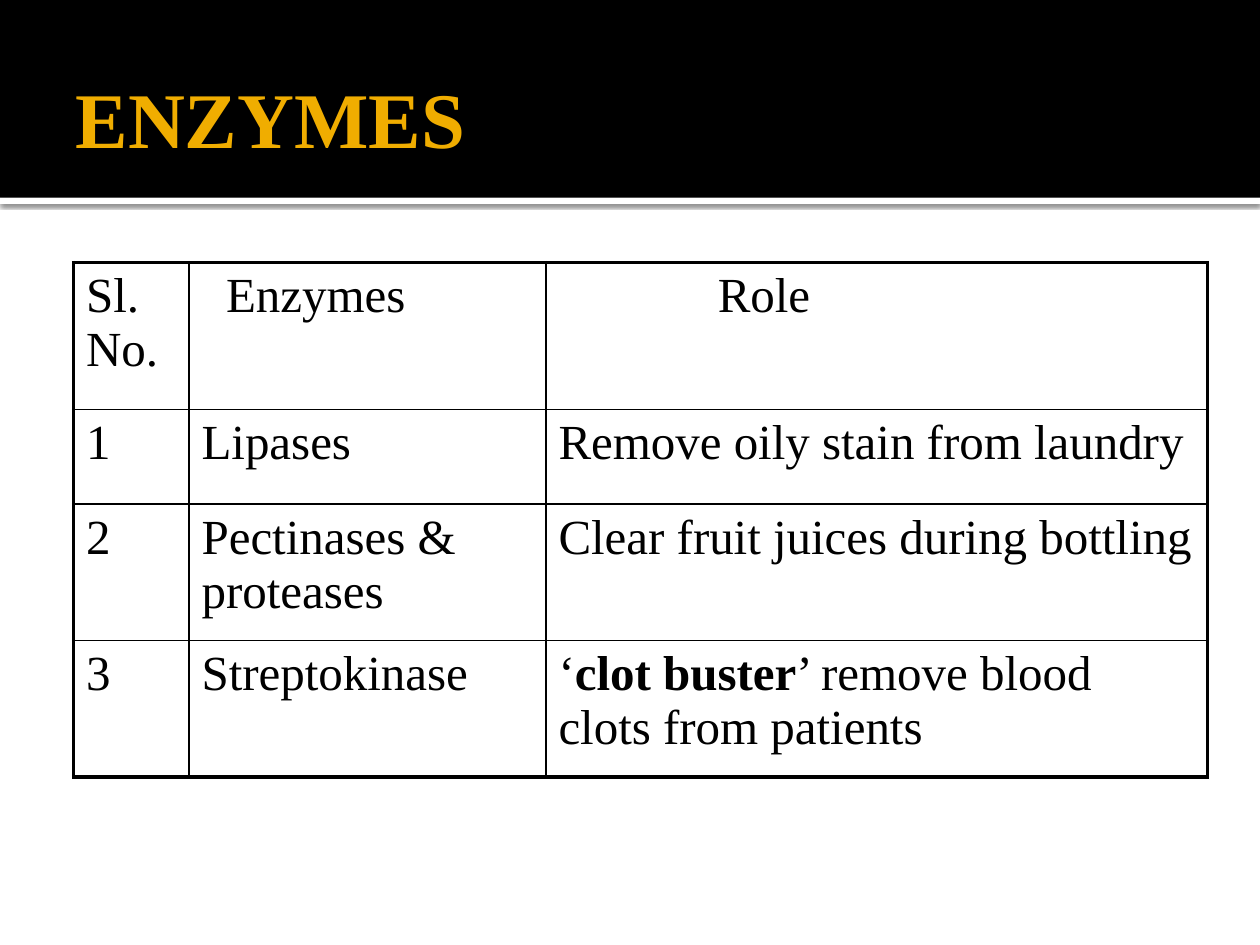
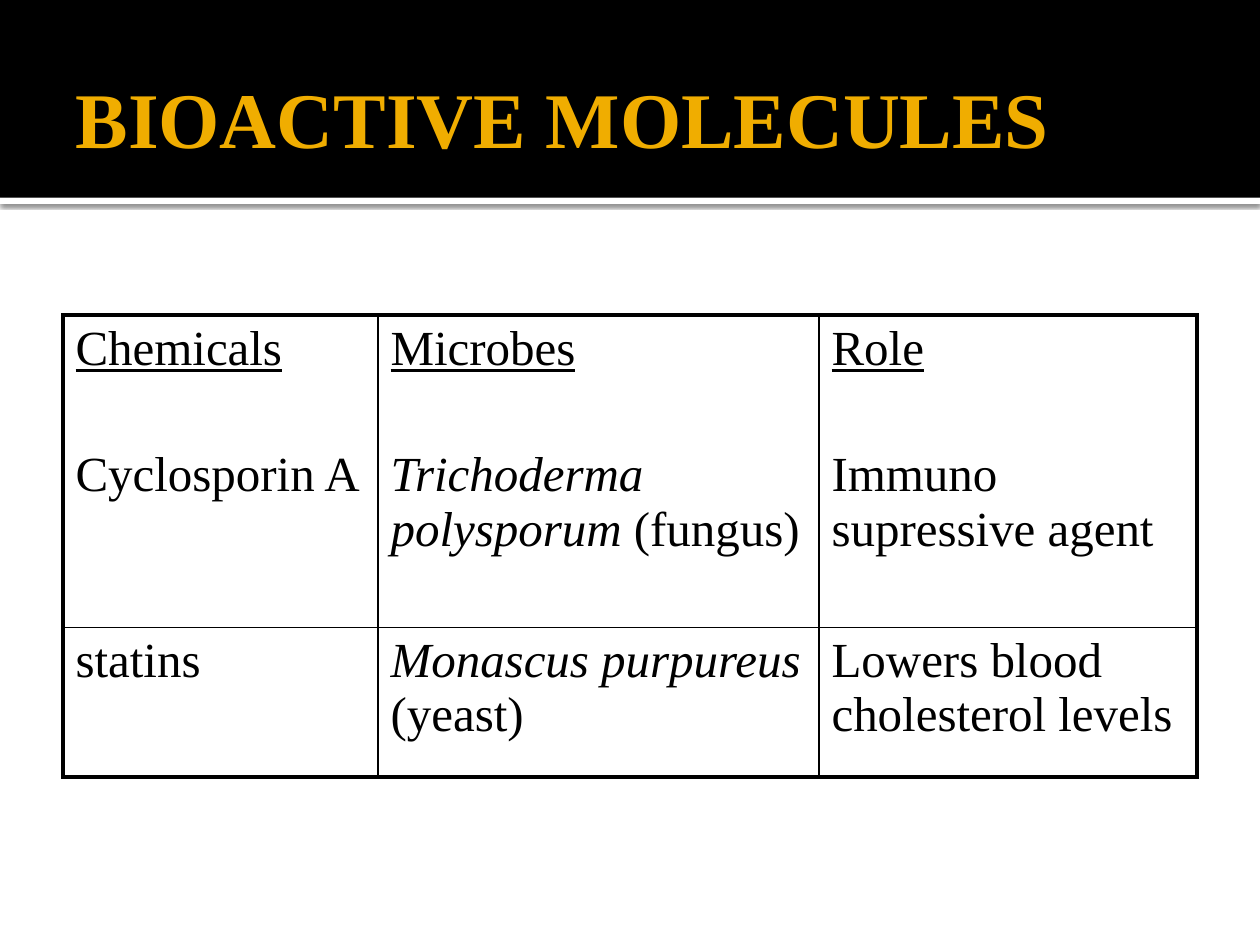
from dataclasses import dataclass

from lxml import etree
from pptx import Presentation
from pptx import util as u
from pptx.dml.color import RGBColor
from pptx.enum import shapes, text
from pptx.oxml import ns

Pt = u.Pt


@dataclass(frozen=True)
class Theme:
    font: str = "Times New Roman"
    black: str = "000000"
    white: str = "FFFFFF"
    gold: str = "F0AD00"
    title_size: float = 45
    body_size: float = 28
    outer_line: float = 2.25
    inner_line: float = 1
    section_gap: float = 41.5


THEME = Theme()
WIDTH, HEIGHT = 720, 540
BAND = (0, 0, WIDTH, 113)
STRIP = (0, 113, WIDTH, 3.6)
TITLE = (36, 21.6, 648, 90)

BOLD = {"bold": True}
ITALIC = {"italic": True}
UNDERLINE = {"underline": True}


def set_all(target, values):
    for name, value in values.items():
        setattr(target, name, value)


def place(sp, box):
    names = ("left", "top", "width", "height")
    set_all(sp, {name: Pt(v) for name, v in zip(names, box)})


def sub(parent, tag, **attrs):
    values = {name: str(value) for name, value in attrs.items()}
    return etree.SubElement(parent, ns.qn(tag), values)


def add_run(p, content, size, color, **style):
    r = p.add_run()
    r.text = content
    set_all(r.font, {"name": THEME.font, "size": Pt(size), "bold": False, **style})
    r.font.color.rgb = RGBColor.from_string(color)


def add_rect(s, box, color):
    sp = s.shapes.add_shape(shapes.MSO_SHAPE.RECTANGLE, *map(Pt, box))
    sp.shadow.inherit = False
    sp.fill.solid()
    sp.fill.fore_color.rgb = RGBColor.from_string(color)
    sp.line.fill.background()
    return sp


def add_header_to_layout(s):
    strip = add_rect(s, STRIP, THEME.white)
    effects = strip.element.spPr.find(ns.qn("a:effectLst"))
    shadow = sub(effects, "a:outerShdw", blurRad=Pt(2.5), dist=Pt(0.8),
                 dir=90 * 60000, algn="t", rotWithShape=0)
    sub(sub(shadow, "a:srgbClr", val=THEME.black), "a:alpha", val=60000)
    band = add_rect(s, BAND, THEME.black)
    tree = s.slide_layout.shapes.element
    for index, sp in enumerate((strip, band), start=2):
        tree.insert(index, sp.element)


def add_title(s, box, content):
    sp = s.shapes.title
    place(sp, box)
    tf = sp.text_frame
    set_all(tf, {
        "word_wrap": True,
        "auto_size": text.MSO_AUTO_SIZE.NONE,
        "vertical_anchor": text.MSO_ANCHOR.MIDDLE,
        "margin_left": Pt(7.2),
        "margin_right": Pt(3.6),
        "margin_top": Pt(3.6),
        "margin_bottom": Pt(3.6),
    })
    p = tf.paragraphs[0]
    p.alignment = text.PP_ALIGN.LEFT
    add_run(p, content, THEME.title_size, THEME.gold, **BOLD)


def set_borders(cell, outer_sides):
    tcPr = cell._tc.get_or_add_tcPr()
    for side in "LRTB":
        width = THEME.outer_line if side in outer_sides else THEME.inner_line
        ln = sub(tcPr, f"a:ln{side}", w=Pt(width))
        sub(sub(ln, "a:solidFill"), "a:srgbClr", val=THEME.black)


def fill_cell(cell, paragraphs):
    tf = cell.text_frame
    for index, runs in enumerate(paragraphs):
        p = tf.add_paragraph() if index else tf.paragraphs[0]
        p.alignment = text.PP_ALIGN.LEFT
        p.space_before = Pt(THEME.section_gap if index else 0)
        for content, style in runs:
            add_run(p, content, THEME.body_size, THEME.black, **style)


def add_grid(s, origin, widths, heights, rows):
    box = (*origin, sum(widths), sum(heights))
    frame = s.shapes.add_table(len(heights), len(widths), *map(Pt, box))
    table = frame.table
    set_all(table, {"first_row": False, "horz_banding": False})
    for column, width in zip(table.columns, widths):
        column.width = Pt(width)
    last_row, last_col = len(heights) - 1, len(widths) - 1
    for i, row in enumerate(rows):
        table.rows[i].height = Pt(heights[i])
        for j, content in enumerate(row):
            cell = table.cell(i, j)
            edges = {"L": j == 0, "R": j == last_col, "T": i == 0, "B": i == last_row}
            set_borders(cell, [side for side, outer in edges.items() if outer])
            cell.fill.background()
            fill_cell(cell, [[(content, {})]] if isinstance(content, str) else content)
    return table


def indent_cell(cell, points):
    pPr = cell.text_frame.paragraphs[0]._p.get_or_add_pPr()
    pPr.set("marL", str(Pt(points)))


def enzymes_slide(s):
    add_title(s, TITLE, "ENZYMES")
    clot_buster = [[("‘", {}), ("clot buster", BOLD),
                    ("’ remove blood clots from patients", {})]]
    table = add_grid(s, (42, 150), (66, 204, 378), (84, 54, 78, 78), [
        ("Sl. No.", "Enzymes", "Role"),
        ("1", "Lipases", "Remove oily stain from laundry"),
        ("2", "Pectinases & proteases", "Clear fruit juices during bottling"),
        ("3", "Streptokinase", clot_buster),
    ])
    for column, points in ((1, 14), (2, 91)):
        indent_cell(table.cell(0, column), points)


def bioactive_slide(s):
    add_title(s, TITLE, "BIOACTIVE MOLECULES")
    fungus = [("Trichoderma polysporum ", ITALIC), ("(fungus)", {})]
    yeast = [("Monascus purpureus", ITALIC), (" (yeast)", {})]
    add_grid(s, (36, 180), (180, 252, 216), (178.5, 85.5), [
        ([[("Chemicals", UNDERLINE)], [("Cyclosporin A", {})]],
         [[("Microbes", UNDERLINE)], fungus],
         [[("Role", UNDERLINE)], [("Immuno supressive agent", {})]]),
        ("statins", [yeast], "Lowers blood cholesterol levels"),
    ])


def main():
    prs = Presentation()
    set_all(prs, {"slide_width": Pt(WIDTH), "slide_height": Pt(HEIGHT)})
    layout = prs.slide_layouts.get_by_name("Title Only")
    enzymes, bioactive = (prs.slides.add_slide(layout) for _ in range(2))
    add_header_to_layout(enzymes)
    enzymes_slide(enzymes)
    bioactive_slide(bioactive)
    prs.save("out.pptx")


if __name__ == "__main__":
    main()
